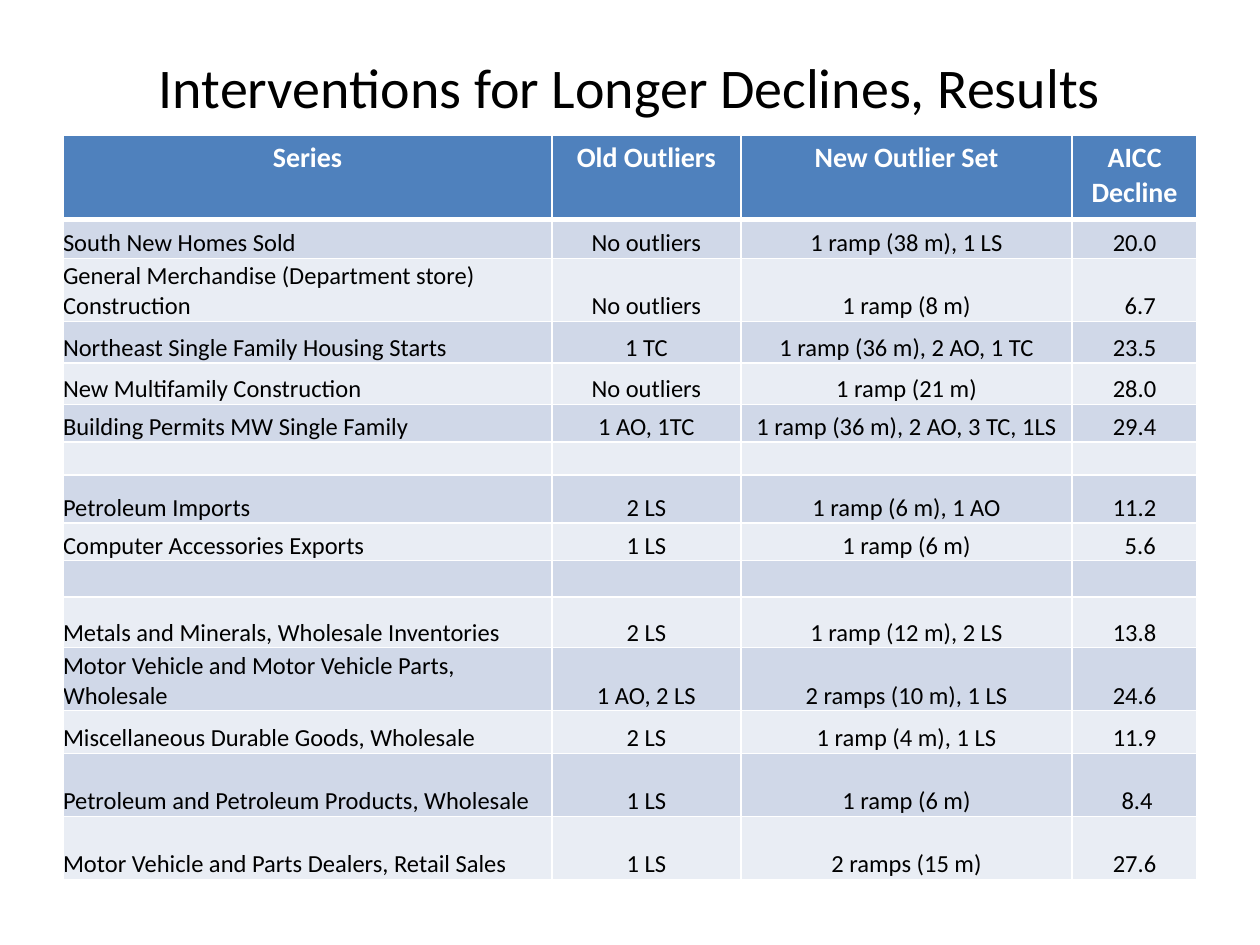
from typing import NamedTuple

from lxml.etree import SubElement
from pptx import Presentation
from pptx.dml.color import RGBColor
from pptx.enum.text import MSO_ANCHOR, PP_ALIGN
from pptx.oxml.ns import qn
from pptx.util import Inches, Pt

HUES = {"ink": "000000", "white": "FFFFFF", "head": "4F81BD", "odd": "D0D8E8", "even": "E9EDF4"}
FONT = "Calibri"
WIDE, HIGH = Inches(10), Inches(7.5)
LEFT, TOP, SPAN = 0.05, 1.07 / 7.5, 0.9
COLS = (0.388, 0.15, 0.263, 0.099)
HEADS = ("Series", "Old Outliers", "New Outlier Set", "AICC Decline")
HEAD_TALL = 0.67


class Row(NamedTuple):
    tall: float
    name: str = ""
    old: str = ""
    new: str = ""
    drop: str = ""
    shift: float = 0


class Look(NamedTuple):
    fill: str
    ink: str
    size: int
    bold: bool
    base: float


HEAD = Look("head", "white", 16, True, 3)
ODD = Look("odd", "ink", 14, False, 1)
EVEN = ODD._replace(fill="even")

ROWS = (
    Row(0.31, "South New Homes Sold", "No outliers", "1 ramp (38 m), 1 LS", "20.0"),
    Row(0.5, "General Merchandise (Department store) Construction", "No outliers", "1 ramp (8 m)", "6.7", 0.09),
    Row(0.33, "Northeast Single Family Housing Starts", "1 TC", "1 ramp (36 m), 2 AO, 1 TC", "23.5"),
    Row(0.33, "New Multifamily Construction", "No outliers", "1 ramp (21 m)", "28.0"),
    Row(0.3, "Building Permits MW Single Family", "1 AO, 1TC", "1 ramp (36 m), 2 AO, 3 TC, 1LS", "29.4"),
    Row(0.26),
    Row(0.38, "Petroleum Imports", "2 LS", "1 ramp (6 m), 1 AO", "11.2"),
    Row(0.3, "Computer Accessories Exports", "1 LS", "1 ramp (6 m)", "5.6", 0.09),
    Row(0.29),
    Row(0.4, "Metals and Minerals, Wholesale Inventories", "2 LS", "1 ramp (12 m), 2 LS", "13.8"),
    Row(0.5, "Motor Vehicle and Motor Vehicle Parts, Wholesale", "1 AO, 2 LS", "2 ramps (10 m), 1 LS", "24.6"),
    Row(0.34, "Miscellaneous Durable Goods, Wholesale", "2 LS", "1 ramp (4 m), 1 LS", "11.9"),
    Row(0.5, "Petroleum and Petroleum Products, Wholesale", "1 LS", "1 ramp (6 m)", "8.4", 0.04),
    Row(0.5, "Motor Vehicle and Parts Dealers, Retail Sales", "1 LS", "2 ramps (15 m)", "27.6"),
)


def hue(name: str) -> RGBColor:
    return RGBColor.from_string(HUES[name])


def style(para, size: int, ink: str, bold: bool, align) -> None:
    para.alignment = align
    font = para.font
    font.name, font.size, font.bold = FONT, Pt(size), bold
    font.color.rgb = hue(ink)


def edge(cell, side: str, width: float) -> None:
    line = SubElement(cell._tc.get_or_add_tcPr(), qn(f"a:ln{side}"), w=str(Pt(width)))
    SubElement(SubElement(line, qn("a:solidFill")), qn("a:srgbClr"), val=HUES["white"])


def draw_cell(cell, text: str, look: Look, align) -> None:
    cell.text = text
    style(cell.text_frame.paragraphs[0], look.size, look.ink, look.bold, align)
    for side, width in zip("LRTB", (1, 1, 1, look.base)):
        edge(cell, side, width)
    cell.fill.solid()
    cell.fill.fore_color.rgb = hue(look.fill)


def draw_row(table, num: int, row: Row) -> None:
    table.rows[num].height = Inches(row.tall)
    for col, text in enumerate((row.name, row.old, row.new, row.drop)):
        cell = table.cell(num, col)
        cell.vertical_anchor = MSO_ANCHOR.BOTTOM
        cell.margin_left = Inches(row.shift if col == 3 else 0)
        cell.margin_right = cell.margin_top = cell.margin_bottom = 0
        draw_cell(cell, text, ODD if num % 2 else EVEN, PP_ALIGN.CENTER if col else PP_ALIGN.LEFT)


def draw_table(slide) -> None:
    tall = Inches(HEAD_TALL + sum(row.tall for row in ROWS))
    place = (int(WIDE * LEFT), int(HIGH * TOP), int(WIDE * SPAN), tall)
    table = slide.shapes.add_table(len(ROWS) + 1, len(COLS), *place).table
    table.rows[0].height = Inches(HEAD_TALL)
    for col, (share, text) in enumerate(zip(COLS, HEADS)):
        table.columns[col].width = int(WIDE * share)
        draw_cell(table.cell(0, col), text, HEAD, PP_ALIGN.CENTER)
    for num, row in enumerate(ROWS, 1):
        draw_row(table, num, row)


def draw_title(slide, text: str) -> None:
    place = (WIDE * LEFT, HIGH * 0.04, WIDE * SPAN, HIGH * 0.103)
    frame = slide.shapes.add_textbox(*map(int, place)).text_frame
    frame.word_wrap = True
    frame.vertical_anchor = MSO_ANCHOR.MIDDLE
    frame.text = text
    style(frame.paragraphs[0], 32, "ink", False, PP_ALIGN.CENTER)


def main() -> None:
    """Build the slide of outlier results and save it."""
    deck = Presentation()
    deck.slide_width, deck.slide_height = WIDE, HIGH
    slide = deck.slides.add_slide(deck.slide_layouts[6])
    draw_title(slide, "Interventions for Longer Declines, Results")
    draw_table(slide)
    deck.save("out.pptx")


if __name__ == "__main__":
    main()
